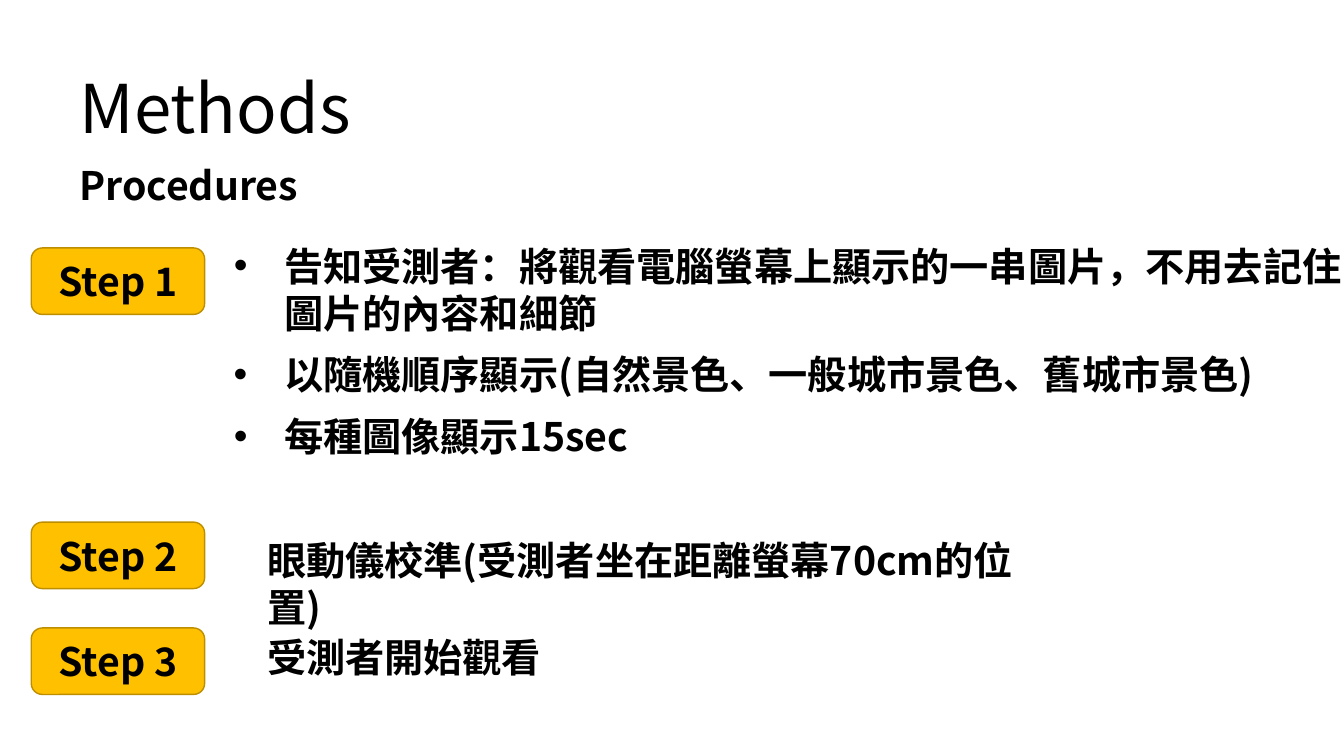
"""Build the Methods slide: three labelled steps of an eye-tracking procedure."""
from lxml import etree
from pptx import Presentation
from pptx.dml.color import RGBColor
from pptx.enum.shapes import MSO_SHAPE
from pptx.enum.text import MSO_ANCHOR, MSO_AUTO_SIZE, PP_ALIGN
from pptx.oxml.ns import qn
from pptx.util import Inches, Pt

ROUND = MSO_SHAPE.ROUNDED_RECTANGLE
LEFT, MID = PP_ALIGN.LEFT, PP_ALIGN.CENTER
CENTER = MSO_ANCHOR.MIDDLE
TOP = MSO_ANCHOR.TOP
GROW = MSO_AUTO_SIZE.SHAPE_TO_FIT_TEXT

FACE = "Noto Sans CJK SC"
HUES = {"ink": "000000", "gold": "FFC000", "edge": "BD8E00"}
HEAD = {"size": Pt(48), "bold": False, "name": FACE}
BODY = {"size": Pt(28), "bold": True, "name": FACE}

WIDE, HIGH = 13.33, 7.5
EDGE, ROW = 0.69, 0.57
TAG = (0.31, 1.72, 0.66)
LIST, NOTE, HANG = 2.22, 2.55, 0.5

TITLE = "Methods"
TOPIC = ("Procedures", EDGE, 1.55, 2.39, ROW)
STEPS = [("Step 1", 2.46), ("Step 2", 5.18), ("Step 3", 6.23)]
ITEMS = [
    ("告知受測者：將觀看電腦螢幕上顯示的一串圖片，不用去記住圖片的內容和細節", 2.35, 11.35, 1.04),
    ("以隨機順序顯示(自然景色、一般城市景色、舊城市景色)", 3.43, 11, ROW),
    ("每種圖像顯示15sec", 4.04, 11.18, ROW),
]
NOTES = [("眼動儀校準(受測者坐在距離螢幕70cm的位置)", 5.27), ("受測者開始觀看", 6.23)]


def hue(key):
    return RGBColor.from_string(HUES[key])


def bullet(par):
    props = par._p.get_or_add_pPr()
    props.set("marL", str(Inches(HANG)))
    props.set("indent", str(-Inches(HANG)))
    etree.SubElement(props, qn("a:buFont")).set("typeface", "Arial")
    etree.SubElement(props, qn("a:buChar")).set("char", "•")


def write(shape, text, look, align=LEFT, anchor=TOP, dot=False):
    frame = shape.text_frame
    frame.word_wrap = True
    frame.vertical_anchor = anchor
    par = frame.paragraphs[0]
    par.alignment = align
    if dot:
        bullet(par)
    run = par.add_run()
    run.text = text
    for key, value in look.items():
        setattr(run.font, key, value)
    run.font.color.rgb = hue("ink")
    props = run._r.get_or_add_rPr()
    etree.SubElement(props, qn("a:ea")).set("typeface", FACE)


def add_text(slide, text, x, y, w, h, dot=False):
    box = slide.shapes.add_textbox(*map(Inches, (x, y, w, h)))
    write(box, text, BODY, dot=dot)
    box.text_frame.auto_size = GROW


def add_tag(slide, text, y):
    x, w, h = TAG
    tag = slide.shapes.add_shape(ROUND, *map(Inches, (x, y, w, h)))
    tag.shadow.inherit = False
    tag.fill.solid()
    tag.fill.fore_color.rgb = hue("gold")
    tag.line.color.rgb = hue("edge")
    tag.line.width = Pt(1)
    write(tag, text, BODY, MID, CENTER)


def main():
    deck = Presentation()
    deck.slide_width, deck.slide_height = Inches(WIDE), Inches(HIGH)
    slide = deck.slides.add_slide(deck.slide_layouts[5])
    title = slide.shapes.title
    spot = {"left": EDGE, "top": 0.61, "width": WIDE - 2 * EDGE, "height": 0.91}
    for key, value in spot.items():
        setattr(title, key, Inches(value))
    write(title, TITLE, HEAD)
    title.text_frame.auto_size = GROW
    add_text(slide, *TOPIC)
    for text, y in STEPS:
        add_tag(slide, text, y)
    for text, y, w, h in ITEMS:
        add_text(slide, text, LIST, y, w, h, dot=True)
    for text, y in NOTES:
        add_text(slide, text, NOTE, y, 8.11, ROW)
    deck.save("out.pptx")


if __name__ == "__main__":
    main()
